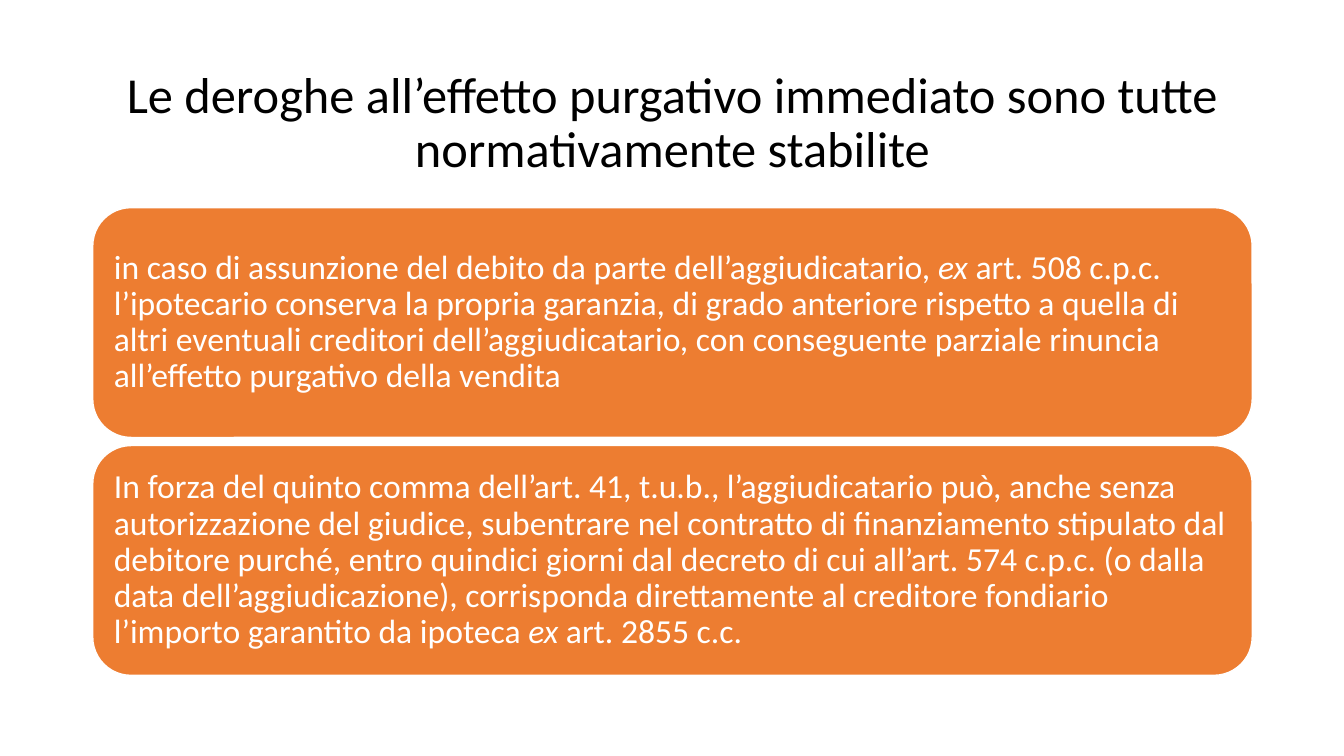
from dataclasses import dataclass

from pptx import Presentation
from pptx.dml.color import RGBColor
from pptx.enum.shapes import MSO_SHAPE as Shape
from pptx.enum.text import MSO_ANCHOR as Anchor, PP_ALIGN as Align
from pptx.util import Inches, Pt


@dataclass
class Theme:
    font = "Calibri"
    title_size = Pt(36)
    body_size = Pt(24)
    black = RGBColor.from_string("000000")
    white = RGBColor.from_string("FFFFFF")
    orange = RGBColor.from_string("ED7D31")


theme = Theme()


def style_paragraph(para, size, color, align):
    para.alignment = align
    para.line_spacing = 0.9
    para.font.name = theme.font
    para.font.size = size
    para.font.color.rgb = color


deck = Presentation()
deck.slide_width = Inches(13.33)
deck.slide_height = Inches(7.5)
page = deck.slides.add_slide(deck.slide_layouts[6])

left, width = Inches(0.92), Inches(11.5)

title = page.shapes.add_textbox(left, Inches(0.61), width, Inches(1.24))
title.text_frame.word_wrap = True
title.text_frame.vertical_anchor = Anchor.MIDDLE
para = title.text_frame.paragraphs[0]
para.text = "Le deroghe all’effetto purgativo immediato sono tutte normativamente stabilite"
style_paragraph(para, theme.title_size, theme.black, Align.CENTER)

exceptions = [
    (
        "in caso di assunzione del debito da parte dell’aggiudicatario, ",
        "art. 508 c.p.c. l’ipotecario conserva la propria garanzia, di grado "
        "anteriore rispetto a quella di altri eventuali creditori "
        "dell’aggiudicatario, con conseguente parziale rinuncia all’effetto "
        "purgativo della vendita",
    ),
    (
        "In forza del quinto comma dell’art. 41, t.u.b., l’aggiudicatario può, "
        "anche senza autorizzazione del giudice, subentrare nel contratto di "
        "finanziamento stipulato dal debitore purché, entro quindici giorni dal "
        "decreto di cui all’art. 574 c.p.c. (o dalla data dell’aggiudicazione), "
        "corrisponda direttamente al creditore fondiario l’importo garantito da "
        "ipoteca ",
        "art. 2855 c.c.",
    ),
]

for index, (before, after) in enumerate(exceptions):
    top = Inches(2.06 + index * 2.36)
    card = page.shapes.add_shape(Shape.ROUNDED_RECTANGLE, left, top, width, Inches(2.28))
    card.shadow.inherit = False
    card.fill.solid()
    card.fill.fore_color.rgb = theme.orange
    card.line.color.rgb = theme.white
    card.line.width = Pt(1)

    frame = card.text_frame
    frame.word_wrap = True
    frame.vertical_anchor = Anchor.MIDDLE
    frame.margin_left = frame.margin_right = Inches(0.1)
    frame.margin_top = frame.margin_bottom = Inches(0.1)
    para = frame.paragraphs[0]
    style_paragraph(para, theme.body_size, theme.white, Align.LEFT)
    for text, italic in ((before, False), ("ex ", True), (after, False)):
        span = para.add_run()
        span.text = text
        span.font.italic = italic

deck.save("out.pptx")
